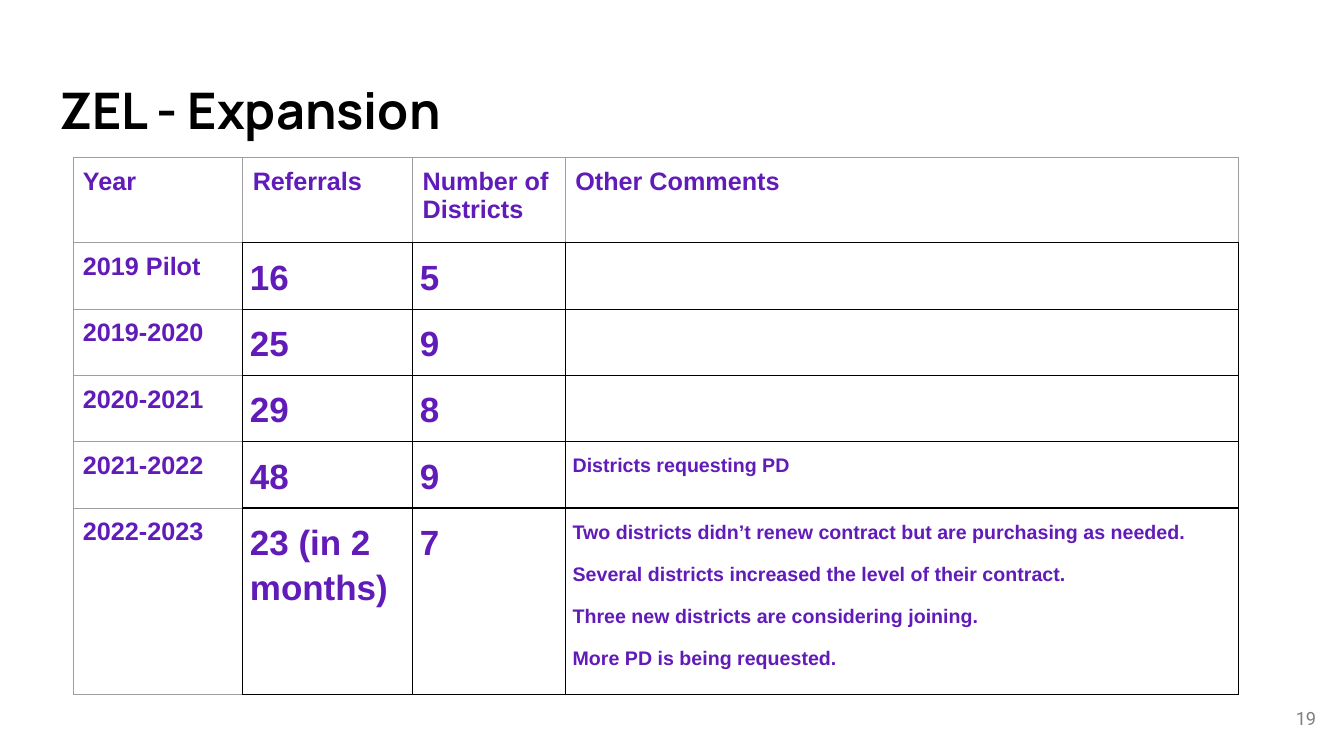
from lxml.etree import SubElement
from pptx import Presentation
from pptx.dml.color import RGBColor
from pptx.enum.text import MSO_ANCHOR, PP_ALIGN
from pptx.oxml.ns import qn
from pptx.util import Cm, Pt

BLACK = RGBColor(0x00, 0x00, 0x00)
GRAY = RGBColor(0x7F, 0x7F, 0x7F)
RULE_GRAY = RGBColor(0x9E, 0x9E, 0x9E)
PURPLE = RGBColor(0x61, 0x1B, 0xB8)

COLUMN_WIDTHS = [4.28, 4.28, 3.85, 16.97]
ROW_HEIGHTS = [2.15] + [1.67] * 4 + [4.7]
LABEL_SIZE, COUNT_SIZE, COMMENT_SIZE = 18, 25, 14

ROWS = [
    ("Year", "Referrals", "Number of Districts", "Other Comments"),
    ("2019 Pilot", "16", "5", ""),
    ("2019-2020", "25", "9", ""),
    ("2020-2021", "29", "8", ""),
    ("2021-2022", "48", "9", "Districts requesting PD"),
    ("2022-2023", "23 (in 2 months)", "7",
     "Two districts didn’t renew contract but are purchasing as needed.\n"
     "Several districts increased the level of their contract.\n"
     "Three new districts are considering joining.\n"
     "More PD is being requested."),
]


def style_font(font, name, size, color, bold=False):
    font.name = name
    font.size = Pt(size)
    font.bold = bold
    font.color.rgb = color


def set_margins(target, horizontal, top, bottom):
    target.margin_left = target.margin_right = Cm(horizontal)
    target.margin_top = Cm(top)
    target.margin_bottom = Cm(bottom)


def add_text(page, text, left, top, width, height, font_name, size, color,
             bold=False, align=PP_ALIGN.LEFT, anchor=MSO_ANCHOR.TOP):
    box = page.shapes.add_textbox(Cm(left), Cm(top), Cm(width), Cm(height))
    frame = box.text_frame
    frame.word_wrap = True
    frame.vertical_anchor = anchor
    set_margins(frame, 0.33, 0.33, 0.33)
    frame.text = text
    para = frame.paragraphs[0]
    para.alignment = align
    style_font(para.runs[0].font, font_name, size, color, bold)


def set_borders(cell, gray_sides):
    """Draw thin gray lines on the sides named, black ones on the rest."""
    properties = cell._tc.get_or_add_tcPr()
    for side in "LRTB":
        color, width = (RULE_GRAY, 0.75) if side in gray_sides else (BLACK, 1)
        line = SubElement(properties, qn(f"a:ln{side}"), w=str(Pt(width)))
        fill = SubElement(line, qn("a:solidFill"))
        SubElement(fill, qn("a:srgbClr"), val=str(color))


def fill_cell(cell, text, row, column):
    is_label = row == 0 or column == 0
    if is_label:
        size = LABEL_SIZE
    else:
        size = COMMENT_SIZE if column == 3 else COUNT_SIZE

    # Borders: gray around the labels, black around the body
    if row == 0:
        gray_sides = "LRTB" if column == 0 else "LRT"
    else:
        gray_sides = "LTB" if column == 0 else ""
    set_borders(cell, gray_sides)
    cell.fill.background()

    # Text
    if is_label:
        set_margins(cell, 0.25, 0.25, 0.25)
    else:
        set_margins(cell, 0.18, 0.25, 0.18)
    cell.text_frame.text = text
    for para in cell.text_frame.paragraphs:
        if not is_label:
            para.line_spacing = 1.15
            para.space_before = Pt(12)
        for span in para.runs:
            style_font(span.font, "Arial", size, PURPLE, bold=True)


def add_expansion_table(page, left, top):
    frame = page.shapes.add_table(
        len(ROWS), len(COLUMN_WIDTHS), Cm(left), Cm(top),
        Cm(sum(COLUMN_WIDTHS)), Cm(sum(ROW_HEIGHTS)))
    table = frame.table
    table.first_row = table.horz_banding = False
    for column, width in zip(table.columns, COLUMN_WIDTHS):
        column.width = Cm(width)
    for row, height in zip(table.rows, ROW_HEIGHTS):
        row.height = Cm(height)
    for row, texts in enumerate(ROWS):
        for column, text in enumerate(texts):
            fill_cell(table.cell(row, column), text, row, column)


def main():
    deck = Presentation()
    deck.slide_width, deck.slide_height = Cm(33.87), Cm(19.05)
    page = deck.slides.add_slide(deck.slide_layouts[6])

    # Title
    add_text(page, "ZEL - Expansion", 1.16, 1.67, 31.55, 2.31,
             "Manrope", 36, BLACK, bold=True)

    # Referrals by year
    add_expansion_table(page, 1.84, 3.97)

    # Page number
    add_text(page, "19", 31.47, 17.37, 2.03, 1.45, "Roboto", 13, GRAY,
             align=PP_ALIGN.RIGHT, anchor=MSO_ANCHOR.MIDDLE)

    deck.save("out.pptx")


if __name__ == "__main__":
    main()
